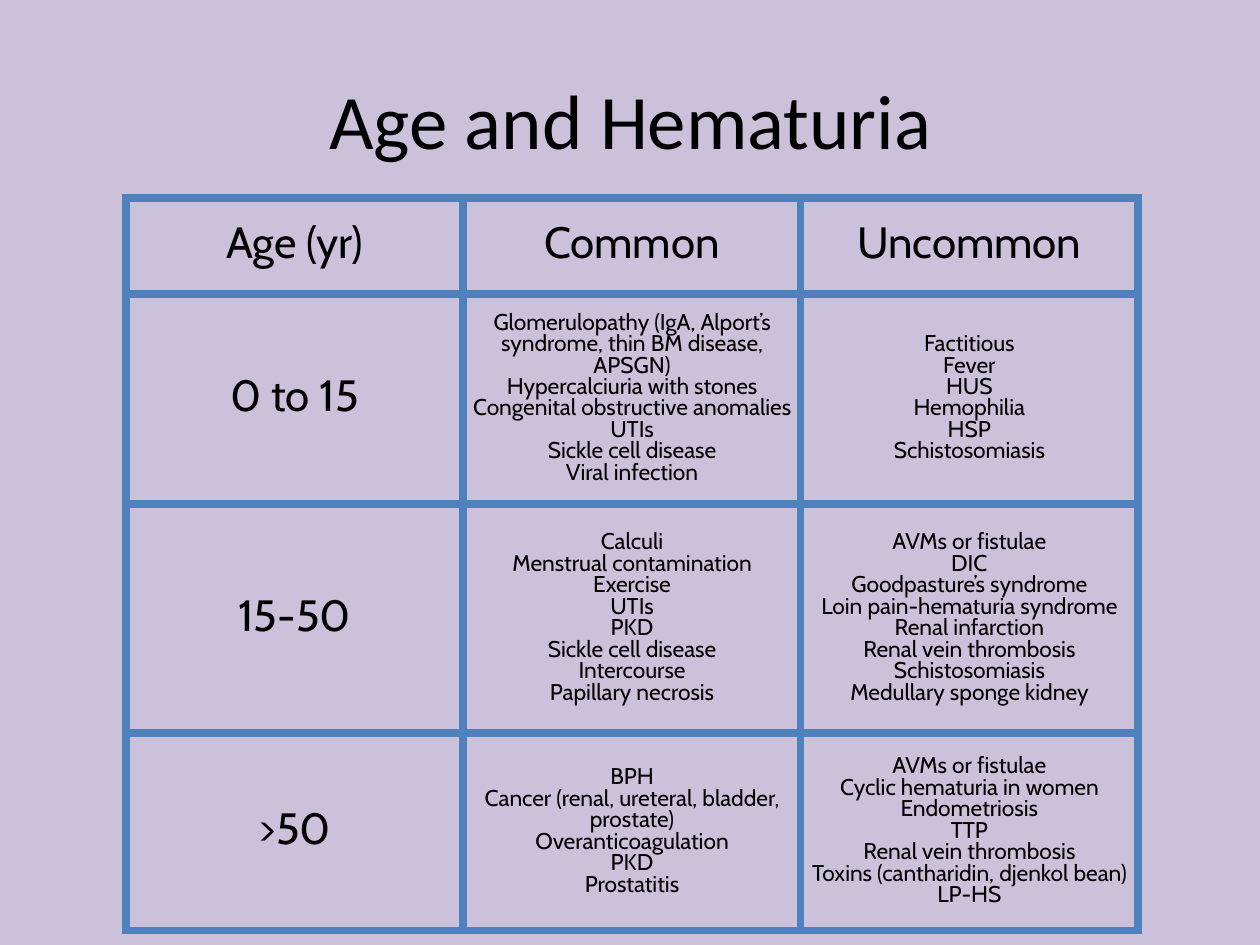
import dataclasses

import lxml.etree
import pptx
import pptx.dml.color
import pptx.enum.text
import pptx.oxml.ns
import pptx.presentation
import pptx.slide
import pptx.table
import pptx.text.text
import pptx.util

Cm = pptx.util.Cm
Pt = pptx.util.Pt
RGBColor = pptx.dml.color.RGBColor
qn = pptx.oxml.ns.qn

LAVENDER = RGBColor(0xCC, 0xC1, 0xDA)
BLUE = RGBColor(0x4F, 0x81, 0xBD)
BLACK = RGBColor(0, 0, 0)

TITLE_ONLY = 5
COLUMN_WIDTH = Cm(6.8)
CELL_MARGIN = Cm(0.1)
BORDER_WIDTH = Pt(5)
LABEL_SIZE = 25
CAUSE_SIZE = 13


@dataclasses.dataclass(frozen=True)
class AgeGroup:
    age: str
    common: tuple[str, ...]
    uncommon: tuple[str, ...]
    height: float
    cause_size: int = CAUSE_SIZE


ROWS = (
    AgeGroup("Age (yr)", ("Common",), ("Uncommon",), 1.93, LABEL_SIZE),
    AgeGroup(
        "0 to 15",
        (
            "Glomerulopathy (IgA, Alport’s syndrome, thin BM disease, APSGN)",
            "Hypercalciuria with stones",
            "Congenital obstructive anomalies",
            "UTIs",
            "Sickle cell disease",
            "Viral infection",
        ),
        ("Factitious", "Fever", "HUS", "Hemophilia", "HSP", "Schistosomiasis"),
        4.24,
    ),
    AgeGroup(
        "15-50",
        (
            "Calculi",
            "Menstrual contamination",
            "Exercise",
            "UTIs",
            "PKD",
            "Sickle cell disease",
            "Intercourse",
            "Papillary necrosis",
        ),
        (
            "AVMs or fistulae",
            "DIC",
            "Goodpasture’s syndrome",
            "Loin pain-hematuria syndrome",
            "Renal infarction",
            "Renal vein thrombosis",
            "Schistosomiasis",
            "Medullary sponge kidney",
        ),
        4.62,
    ),
    AgeGroup(
        ">50",
        (
            "BPH",
            "Cancer (renal, ureteral, bladder, prostate)",
            "Overanticoagulation",
            "PKD",
            "Prostatitis",
        ),
        (
            "AVMs or fistulae",
            "Cyclic hematuria in women",
            "Endometriosis",
            "TTP",
            "Renal vein thrombosis",
            "Toxins (cantharidin, djenkol bean)",
            "LP-HS",
        ),
        3.98,
    ),
)


def write_text(
    tf: pptx.text.text.TextFrame,
    lines: tuple[str, ...],
    *,
    size: float,
    font: str = "Cabin",
    color: RGBColor = BLACK,
    spacing: float = 0.78,
) -> None:
    for i, line in enumerate(lines):
        p = tf.paragraphs[0] if i == 0 else tf.add_paragraph()
        p.alignment = pptx.enum.text.PP_ALIGN.CENTER
        p.line_spacing = spacing
        r = p.add_run()
        r.text = line
        r.font.size = Pt(size)
        r.font.name = font
        r.font.color.rgb = color


def add_borders(cell: pptx.table._Cell) -> None:
    tc_pr = cell._tc.get_or_add_tcPr()
    for side in ("lnL", "lnR", "lnT", "lnB"):
        ln = lxml.etree.SubElement(tc_pr, qn(f"a:{side}"), w=str(BORDER_WIDTH))
        fill = lxml.etree.SubElement(ln, qn("a:solidFill"))
        lxml.etree.SubElement(fill, qn("a:srgbClr"), val=str(BLUE))


def fill_cell(cell: pptx.table._Cell, lines: tuple[str, ...], size: float) -> None:
    cell.margin_left = cell.margin_right = CELL_MARGIN
    cell.margin_top = cell.margin_bottom = CELL_MARGIN
    cell.vertical_anchor = pptx.enum.text.MSO_ANCHOR.MIDDLE
    add_borders(cell)
    cell.fill.background()
    write_text(cell.text_frame, lines, size=size)


def add_title(s: pptx.slide.Slide, text: str) -> None:
    sp = s.shapes.title
    sp.left, sp.top, sp.width, sp.height = Cm(2.49), Cm(0), Cm(20.45), Cm(4.78)
    tf = sp.text_frame
    tf.vertical_anchor = pptx.enum.text.MSO_ANCHOR.MIDDLE
    write_text(tf, (text,), size=44, font="Calibri", spacing=1.0)


def add_age_table(s: pptx.slide.Slide, rows: tuple[AgeGroup, ...]) -> None:
    height = Cm(sum(row.height for row in rows))
    frame = s.shapes.add_table(len(rows), 3, Cm(2.54), Cm(3.99), 3 * COLUMN_WIDTH, height)
    table = frame.table
    table.first_row = table.horz_banding = False
    for column in table.columns:
        column.width = COLUMN_WIDTH
    for i, row in enumerate(rows):
        table.rows[i].height = Cm(row.height)
        fill_cell(table.cell(i, 0), (row.age,), LABEL_SIZE)
        fill_cell(table.cell(i, 1), row.common, row.cause_size)
        fill_cell(table.cell(i, 2), row.uncommon, row.cause_size)


def main() -> None:
    prs = pptx.Presentation()
    prs.slide_width, prs.slide_height = Cm(25.4), Cm(19.05)
    s = prs.slides.add_slide(prs.slide_layouts[TITLE_ONLY])
    s.background.fill.solid()
    s.background.fill.fore_color.rgb = LAVENDER
    add_title(s, "Age and Hematuria")
    add_age_table(s, ROWS)
    prs.save("out.pptx")


if __name__ == "__main__":
    main()
